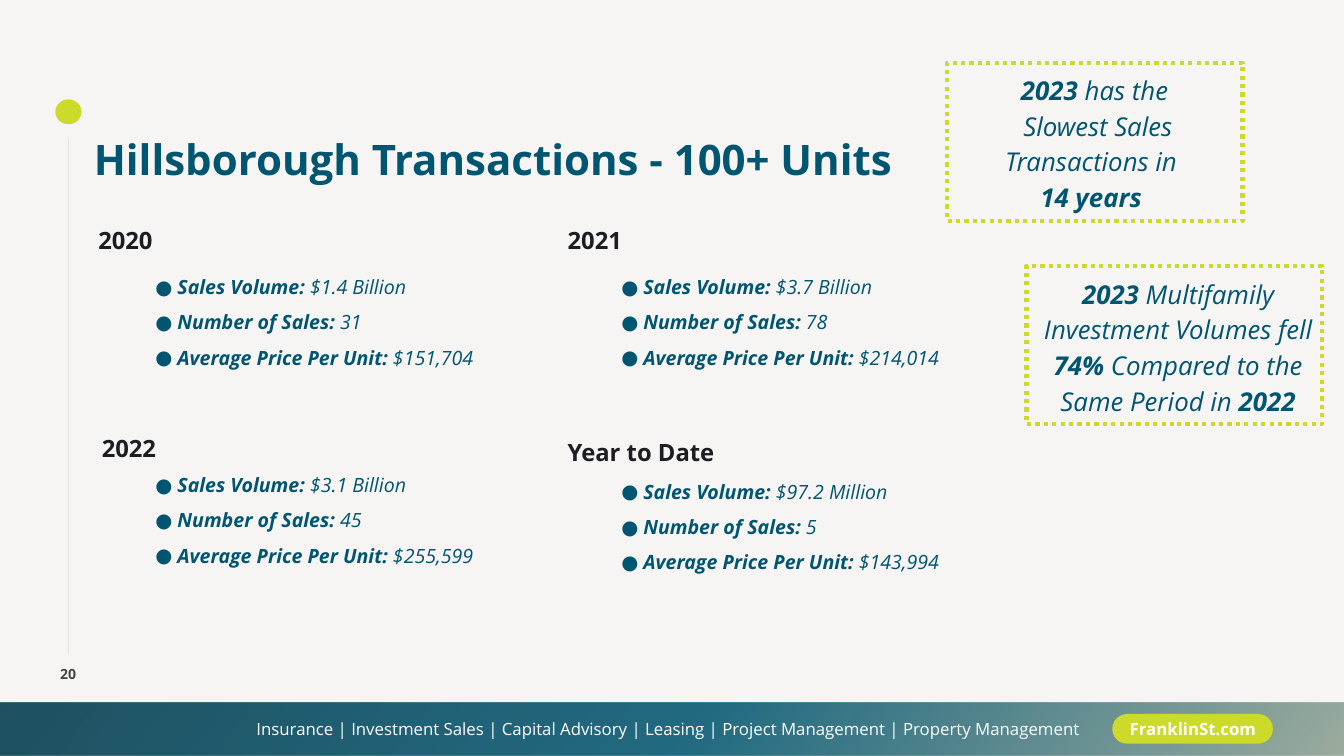
from dataclasses import dataclass
from lxml import etree
from pptx import Presentation
from pptx.dml.color import RGBColor
from pptx.enum.dml import MSO_LINE
from pptx.enum.shapes import MSO_CONNECTOR, MSO_SHAPE
from pptx.enum.text import MSO_ANCHOR, MSO_AUTO_SIZE, PP_ALIGN
from pptx.oxml import parse_xml
from pptx.oxml.ns import nsdecls, qn
from pptx.util import Pt

LEFT, MID, RIGHT = PP_ALIGN.LEFT, PP_ALIGN.CENTER, PP_ALIGN.RIGHT
TOP, CENTRE = MSO_ANCHOR.TOP, MSO_ANCHOR.MIDDLE
GROW, FIXED = MSO_AUTO_SIZE.SHAPE_TO_FIT_TEXT, MSO_AUTO_SIZE.NONE
RECT, ROUND, OVAL = MSO_SHAPE.RECTANGLE, MSO_SHAPE.ROUNDED_RECTANGLE, MSO_SHAPE.OVAL
DOTS, STRAIGHT = MSO_LINE.ROUND_DOT, MSO_CONNECTOR.STRAIGHT
FACE = "Open Sans"
TEAL, LIME, INK, WHITE = "005570", "CCDB2A", "1C1D22", "FFFFFF"
PAPER, RULE, GREY = "F7F5F4", "E4E4E4", "41463F"
LABELS = ("Sales Volume: ", "Number of Sales: ", "Average Price Per Unit: ")


@dataclass
class Box:
    x: float
    y: float
    w: float
    h: float


@dataclass
class Style:
    size: float
    tint: str
    slant: bool = False
    align: int = LEFT
    gap: float = 1


@dataclass
class Run:
    text: str
    bold: bool = False


@dataclass
class Year:
    name: str
    head: Box
    body: Box
    facts: tuple[str, str, str]


@dataclass
class Callout:
    frame: Box
    box: Box
    paras: list[list[Run]]


@dataclass
class Stop:
    pos: int
    tint: str
    alpha: int


HEAD = Style(34, INK, gap=1.5)
FACT = Style(28, TEAL, slant=True, gap=1.5)
CALL = Style(37, TEAL, slant=True, align=MID, gap=1.15)

YEARS = [
    Year("2020", Box(136, 307.5, 448.5, 49), Box(141, 379.5, 590.5, 144),
         ("$1.4 Billion", "31", "$151,704")),
    Year("2021", Box(806.5, 307.5, 448.5, 49), Box(806.5, 379.5, 590.5, 144),
         ("$3.7 Billion", "78", "$214,014")),
    Year("2022", Box(141, 605.5, 518.5, 49), Box(141, 662.5, 590.5, 144),
         ("$3.1 Billion", "45", "$255,599")),
    Year("Year to Date", Box(806.5, 610.5, 518.5, 49), Box(806.5, 672, 590.5, 144),
         ("$97.2 Million", "5", "$143,994")),
]

CALLS = [
    Callout(Box(1353, 89.5, 422, 226), Box(1358, 98, 411, 207.5), [
        [Run("2023", True), Run(" has the")],
        [Run(" Slowest Sales Transactions in ")],
        [Run("14 years ", True)],
    ]),
    Callout(Box(1466.5, 379.5, 422, 226), Box(1477.5, 389, 411, 207.5), [
        [Run("2023", True), Run(" Multifamily Investment Volumes fell "),
         Run("74%", True), Run(" Compared to the Same Period in "),
         Run("2022", True)],
    ]),
]

STOPS = [Stop(0, "003A4C", 87), Stop(52, TEAL, 86), Stop(100, "94A596", 90)]


def tone(code: str) -> RGBColor:
    return RGBColor.from_string(code)


def place(shape, box: Box) -> None:
    shape.left, shape.top = Pt(box.x), Pt(box.y)
    shape.width, shape.height = Pt(box.w), Pt(box.h)


def mark(para) -> None:
    props = para._p.get_or_add_pPr()
    props.set("marL", str(Pt(108)))
    props.set("indent", str(Pt(-31.5)))
    tint = etree.SubElement(props, qn("a:buClr"))
    etree.SubElement(tint, qn("a:srgbClr"), val=TEAL)
    etree.SubElement(props, qn("a:buFont"), typeface=FACE)
    etree.SubElement(props, qn("a:buChar"), char="●")


def write(shape, paras: list[list[Run]], style: Style, dots: bool = False,
          anchor: int = CENTRE, pad: tuple[float, float] = (4.5, 4.5),
          fit: int = GROW) -> None:
    frame = shape.text_frame
    frame.word_wrap = True
    frame.auto_size = fit
    frame.vertical_anchor = anchor
    frame.margin_left = frame.margin_right = Pt(pad[0])
    frame.margin_top = frame.margin_bottom = Pt(pad[1])
    for num, runs in enumerate(paras):
        para = frame.add_paragraph() if num else frame.paragraphs[0]
        para.alignment = style.align
        para.line_spacing = style.gap
        if dots:
            mark(para)
        for item in runs:
            run = para.add_run()
            run.text = item.text
            font = run.font
            font.name, font.size = FACE, Pt(style.size)
            font.bold, font.italic = item.bold, style.slant
            font.color.rgb = tone(style.tint)


def label(slide, box: Box, paras: list[list[Run]], style: Style, **opts) -> None:
    shape = slide.shapes.add_textbox(Pt(0), Pt(0), Pt(1), Pt(1))
    write(shape, paras, style, **opts)
    place(shape, box)


def block(slide, kind: int, box: Box, fill: str | None = None):
    shape = slide.shapes.add_shape(kind, Pt(0), Pt(0), Pt(1), Pt(1))
    place(shape, box)
    shape.shadow.inherit = False
    shape.line.fill.background()
    if fill:
        shape.fill.solid()
        shape.fill.fore_color.rgb = tone(fill)
    else:
        shape.fill.background()
    return shape


def blend(shape, stops: list[Stop], angle: float) -> None:
    shape.fill.gradient()
    shape.fill.gradient_angle = 360 - angle
    items = shape._element.spPr.find(qn("a:gradFill")).find(qn("a:gsLst"))
    for old in list(items):
        items.remove(old)
    for stop in stops:
        items.append(parse_xml(
            f'<a:gs {nsdecls("a")} pos="{stop.pos * 1000}">'
            f'<a:srgbClr val="{stop.tint}"><a:alpha val="{stop.alpha * 1000}"/>'
            f'</a:srgbClr></a:gs>'))


def frame_up(slide) -> None:
    blend(block(slide, RECT, Box(0, 1003, 1920, 77)), STOPS, 36)
    rail = slide.shapes.add_connector(STRAIGHT, Pt(98), Pt(934.5), Pt(98), Pt(196.5))
    rail.line.color.rgb = tone(RULE)
    rail.line.width = Pt(2)
    etree.SubElement(rail._element.spPr, qn("a:effectLst"))
    pill = block(slide, ROUND, Box(1589, 1020, 229.5, 42.5), LIME)
    pill.adjustments[0] = 0.5
    label(slide, Box(1593.5, 1023, 221, 37.5), [[Run("FranklinSt.com", True)]],
          Style(24, WHITE, align=MID))
    label(slide, Box(210, 1023, 1337, 37.5),
          [[Run("Insurance | Investment Sales | Capital Advisory | Leasing | "
                "Project Management | Property Management")]],
          Style(24, WHITE, align=RIGHT))
    block(slide, OVAL, Box(79, 142, 37.5, 35.5), LIME)
    label(slide, Box(72.5, 947.5, 50, 35.5), [[Run("20", True)]],
          Style(20, GREY, align=MID), anchor=TOP, pad=(7.2, 3.6), fit=FIXED)


def main() -> None:
    deck = Presentation()
    deck.slide_width, deck.slide_height = Pt(1920), Pt(1080)
    slide = deck.slides.add_slide(deck.slide_layouts[5])
    slide.background.fill.solid()
    slide.background.fill.fore_color.rgb = tone(PAPER)
    frame_up(slide)
    title = slide.shapes.title
    place(title, Box(129.5, 186.5, 1267, 80.5))
    write(title, [[Run("Hillsborough Transactions - 100+ Units", True)]], Style(60, TEAL))
    for year in YEARS:
        label(slide, year.head, [[Run(year.name, True)]], HEAD)
        rows = [[Run(name, True), Run(fact)] for name, fact in zip(LABELS, year.facts)]
        label(slide, year.body, rows, FACT, dots=True)
    for call in CALLS:
        label(slide, call.box, call.paras, CALL)
        edge = block(slide, RECT, call.frame).line
        edge.color.rgb = tone(LIME)
        edge.width = Pt(6)
        edge.dash_style = DOTS
    deck.save("out.pptx")


if __name__ == "__main__":
    main()
